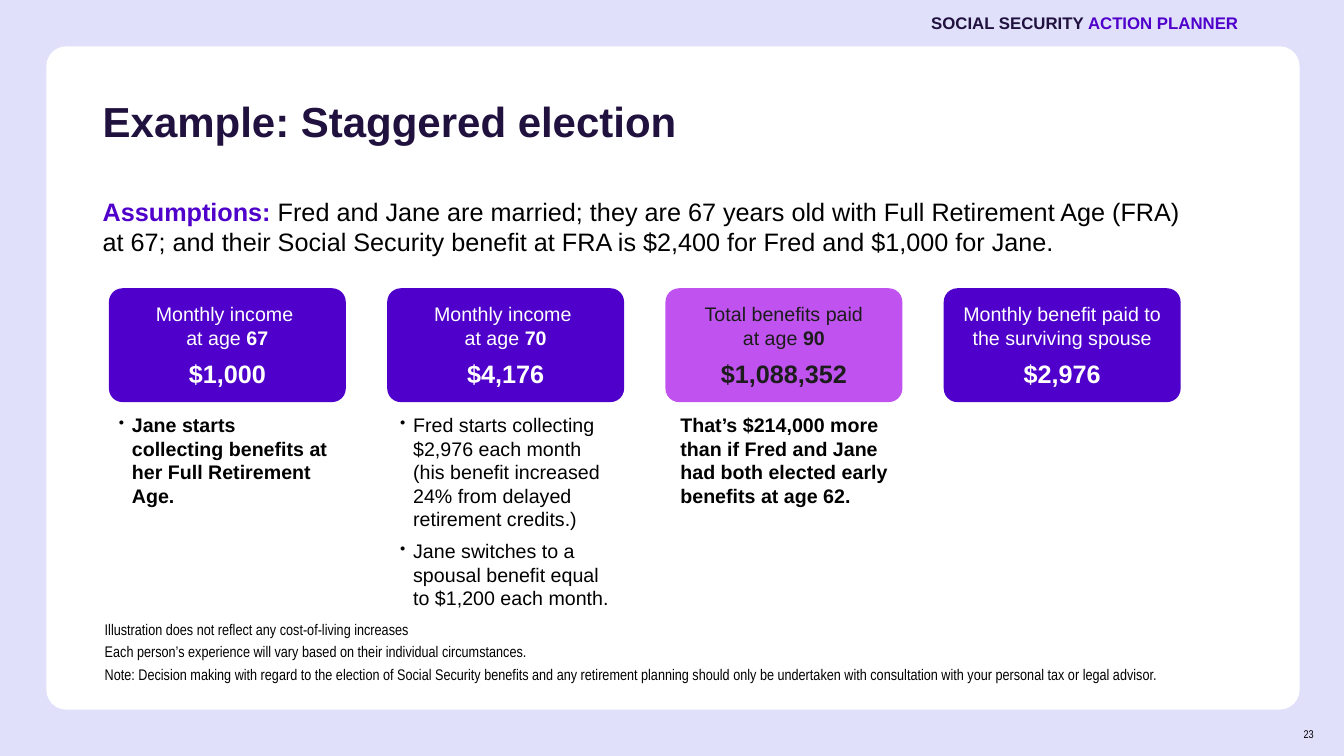
from lxml import etree
from pptx import Presentation
from pptx.dml.color import RGBColor
from pptx.enum.shapes import MSO_SHAPE
from pptx.enum.text import MSO_ANCHOR, PP_ALIGN
from pptx.oxml.ns import qn
from pptx.util import Inches, Pt

ROUNDED = MSO_SHAPE.ROUNDED_RECTANGLE
TOP, MIDDLE, BOTTOM = MSO_ANCHOR.TOP, MSO_ANCHOR.MIDDLE, MSO_ANCHOR.BOTTOM
LEFT, CENTER, RIGHT = PP_ALIGN.LEFT, PP_ALIGN.CENTER, PP_ALIGN.RIGHT

COLORS = {
    "lavender": "E0E0FB",
    "white": "FFFFFF",
    "navy": "20113E",
    "purple": "4F00CA",
    "orchid": "C053EF",
    "charcoal": "1C1C1C",
    "black": "000000",
}

CARD_LEFT, CARD_PITCH = 1.08, 2.76

# Caption, age, amount, fill, text colour of each card
CARDS = [
    ("Monthly income \nat age ", "67", "$1,000", "purple", "white"),
    ("Monthly income \nat age ", "70", "$4,176", "purple", "white"),
    ("Total benefits paid\nat age ", "90", "$1,088,352", "orchid", "charcoal"),
    ("Monthly benefit paid to the surviving spouse", "", "$2,976", "purple", "white"),
]

# Shift from the card's left edge, bold, bulleted, paragraphs under each card
DETAILS = [
    (0, True, True, ["Jane starts collecting benefits at her Full Retirement Age."]),
    (0.03, False, True, [
        "Fred starts collecting $2,976 each month \n"
        "(his benefit increased 24% from delayed retirement credits.)",
        "Jane switches to a spousal benefit equal to $1,200 each month.",
    ]),
    (0.05, True, False, [
        "That’s $214,000 more than if Fred and Jane had both elected early "
        "benefits at age 62.",
    ]),
]

FOOTNOTES = [
    "Illustration does not reflect any cost-of-living increases",
    "Each person’s experience will vary based on their individual circumstances.",
    "Note: Decision making with regard to the election of Social Security benefits "
    "and any retirement planning should only be undertaken with consultation with "
    "your personal tax or legal advisor.",
]


def rgb(name):
    return RGBColor.from_string(COLORS[name])


def add_bullet(paragraph):
    properties = paragraph._p.get_or_add_pPr()
    properties.set("marL", str(Inches(0.13)))
    properties.set("indent", str(-Inches(0.13)))
    etree.SubElement(properties, qn("a:buSzPct"), val="80000")
    etree.SubElement(properties, qn("a:buChar"), char="•")


def write_paragraph(paragraph, pieces, size, align=LEFT, after=0, font="Arial"):
    """Each piece is (text, colour, bold); a newline becomes a line break."""
    paragraph.alignment = align
    paragraph.space_after = Pt(after)
    for text, color, bold in pieces:
        for index, line in enumerate(text.split("\n")):
            if index:
                paragraph.add_line_break()
            run = paragraph.add_run()
            run.text = line
            run.font.name = font
            run.font.size = Pt(size)
            run.font.bold = bold
            run.font.color.rgb = rgb(color)


def add_text_box(slide, left, top, width, height, paragraphs, size,
                 anchor=TOP, bulleted=False, **style):
    box = slide.shapes.add_textbox(Inches(left), Inches(top), Inches(width), Inches(height))
    frame = box.text_frame
    frame.word_wrap = True
    frame.vertical_anchor = anchor
    for index, pieces in enumerate(paragraphs):
        paragraph = frame.add_paragraph() if index else frame.paragraphs[0]
        if bulleted:
            add_bullet(paragraph)
        write_paragraph(paragraph, pieces, size, **style)
    return box


def add_panel(slide, left, top, width, height, rounding, fill):
    shape = slide.shapes.add_shape(
        ROUNDED, Inches(left), Inches(top), Inches(width), Inches(height))
    shape.adjustments[0] = rounding
    shape.shadow.inherit = False
    shape.fill.solid()
    shape.fill.fore_color.rgb = rgb(fill)
    shape.line.fill.background()
    return shape


def add_card(slide, left, caption, age, amount, fill, color):
    frame = add_panel(slide, left, 2.86, 2.35, 1.13, 0.12, fill).text_frame
    frame.word_wrap = True
    frame.vertical_anchor = MIDDLE
    pieces = [(caption, color, False)]
    if age:
        pieces.append((age, color, True))
    write_paragraph(frame.paragraphs[0], pieces, 14, CENTER, 6)
    write_paragraph(frame.add_paragraph(), [(amount, color, True)], 18, CENTER, 6)


def main():
    presentation = Presentation()
    presentation.slide_width = Inches(13.33)
    presentation.slide_height = Inches(7.5)
    slide = presentation.slides.add_slide(presentation.slide_layouts[6])

    # Background and white panel
    slide.background.fill.solid()
    slide.background.fill.fore_color.rgb = rgb("lavender")
    add_panel(slide, 0.46, 0.46, 12.43, 6.58, 0.03, "white")

    # Title, running header and assumptions
    title = add_text_box(slide, 0.92, 0.96, 11.88, 0.92,
                         [[("Example: Staggered election", "navy", True)]], 30)
    title.text_frame.paragraphs[0].line_spacing = 0.9
    add_text_box(slide, 6.67, 0, 5.71, 0.45,
                 [[("SOCIAL SECURITY", "navy", True), (" ACTION PLANNER", "purple", True)]],
                 12, MIDDLE, align=RIGHT)
    assumptions = (
        "Fred and Jane are married; they are 67 years old with Full Retirement Age (FRA) \n"
        "at 67; and their Social Security benefit at FRA is $2,400 for Fred and $1,000 for Jane."
    )
    add_text_box(slide, 0.92, 1.9, 11.25, 1.21,
                 [[("Assumptions: ", "purple", True), (assumptions, "black", False)]],
                 18, after=12)

    # Benefit cards with details below
    for index, card in enumerate(CARDS):
        add_card(slide, CARD_LEFT + index * CARD_PITCH, *card)
    for index, (shift, bold, bulleted, texts) in enumerate(DETAILS):
        add_text_box(slide, CARD_LEFT + index * CARD_PITCH + shift, 4.05, 2.3, 1.87,
                     [[(text, "black", bold)] for text in texts],
                     14, bulleted=bulleted, after=6)

    # Footnotes and page number
    add_text_box(slide, 0.94, 6.19, 11.25, 0.64,
                 [[(note, "black", False)] for note in FOOTNOTES],
                 11, BOTTOM, after=3, font="Arial Narrow")
    add_text_box(slide, 12.43, 7.08, 0.7, 0.4, [[("23", "black", False)]],
                 8, MIDDLE, align=RIGHT, font="Arial Narrow")

    presentation.save("out.pptx")


if __name__ == "__main__":
    main()
